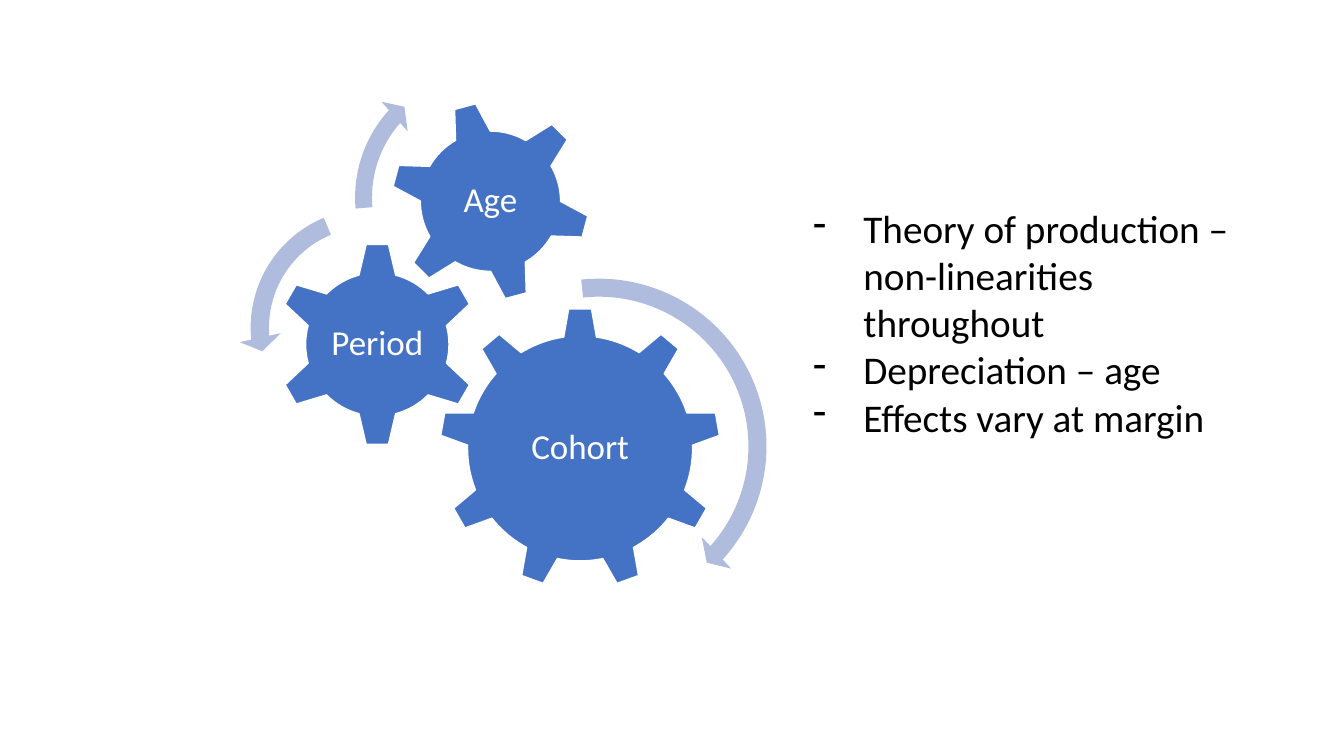
from lxml.etree import SubElement
from pptx import Presentation
from pptx.dml.color import RGBColor
from pptx.enum.shapes import MSO_SHAPE as Shape
from pptx.enum.text import MSO_ANCHOR as Anchor, MSO_AUTO_SIZE as AutoSize, PP_ALIGN as Align
from pptx.oxml.ns import qn
from pptx.util import Cm, Pt

FONT = "Calibri"
BLUE, PALE_BLUE, WHITE, BLACK = "4472C4", "B0BCDE", "FFFFFF", "000000"

# label, preset, centre x, centre y, diameter, rotation, label width, label height
GEARS = [
    ("Cohort", Shape.GEAR_9_, 14.62, 11.3, 7.09, 0, 4.24, 3.66) if hasattr(Shape, "GEAR_9_")
    else ("Cohort", Shape.GEAR_9, 14.62, 11.3, 7.09, 0, 4.24, 3.66),
    ("Period", Shape.GEAR_6, 9.51, 8.68, 5.16, 0, 2.57, 2.54),
    ("Age", Shape.GEAR_6, 12.36, 5.07, 5.05, 345, 2.84, 2.84),
][0:3]

# preset, centre x, centre y, diameter, thickness, head angle, end, start, head width
ARROWS = [
    (Shape.CIRCULAR_ARROW, 15.09, 11.25, 9.09, (0.05, 2.99, 25.26, 158.4, 0.06)),
    (Shape.LEFT_CIRCULAR_ARROW, 9.32, 8.26, 6.6, (0.07, 4.3, 104.89, 148.38, 0.08)),
    (Shape.CIRCULAR_ARROW, 12.22, 4.98, 7.11, (0.06, 3.94, 133.14, 105.08, 0.07)),
]

NOTES = [
    "Theory of production – non-linearities throughout",
    "Depreciation – age",
    "Effects vary at margin",
]


def color(value):
    return RGBColor.from_string(value)


def centred(x, y, width, height):
    """Left, top, width and height of a frame around a centre in cm."""
    return Cm(x - width / 2), Cm(y - height / 2), Cm(width), Cm(height)


def add_figure(page, preset, x, y, size, fill):
    figure = page.shapes.add_shape(preset, *centred(x, y, size, size))
    figure.shadow.inherit = False
    figure.fill.solid()
    figure.fill.fore_color.rgb = color(fill)
    return figure


def style(para, size, ink):
    for span in para.runs:
        span.font.name = FONT
        span.font.size = Pt(size)
        span.font.color.rgb = color(ink)


def add_gear(page, label, preset, x, y, size, rotation, width, height):
    gear = add_figure(page, preset, x, y, size, BLUE)
    gear.rotation = rotation
    gear.line.color.rgb = color(WHITE)
    gear.line.width = Pt(1)

    frame = page.shapes.add_textbox(*centred(x, y, width, height)).text_frame
    frame.word_wrap = True
    frame.vertical_anchor = Anchor.MIDDLE
    frame.margin_left = frame.margin_right = Cm(0.08)
    frame.margin_top = frame.margin_bottom = Cm(0.08)
    frame.text = label
    para = frame.paragraphs[0]
    para.alignment = Align.CENTER
    para.line_spacing = 0.9
    style(para, 25, WHITE)


def add_arrow(page, preset, x, y, size, adjustments):
    arrow = add_figure(page, preset, x, y, size, PALE_BLUE)
    arrow.line.fill.background()
    for index, value in enumerate(adjustments):
        arrow.adjustments[index] = value


def add_notes(page):
    box = page.shapes.add_textbox(Cm(20.24), Cm(5.03), Cm(12.14), Cm(6.25))
    frame = box.text_frame
    frame.word_wrap = True
    frame.auto_size = AutoSize.SHAPE_TO_FIT_TEXT
    frame.text = "\n".join(NOTES)
    for para in frame.paragraphs:
        properties = para._p.get_or_add_pPr()
        properties.set("marL", str(Cm(1.27)))
        properties.set("indent", str(-Cm(1.27)))
        SubElement(properties, qn("a:buFontTx"))
        SubElement(properties, qn("a:buChar"), char="-")
        style(para, 28, BLACK)


def main():
    deck = Presentation()
    deck.slide_width, deck.slide_height = Cm(33.87), Cm(19.05)
    page = deck.slides.add_slide(deck.slide_layouts[6])
    for gear in GEARS:
        add_gear(page, *gear)
    for arrow in ARROWS:
        add_arrow(page, *arrow)
    add_notes(page)
    deck.save("out.pptx")


if __name__ == "__main__":
    main()
